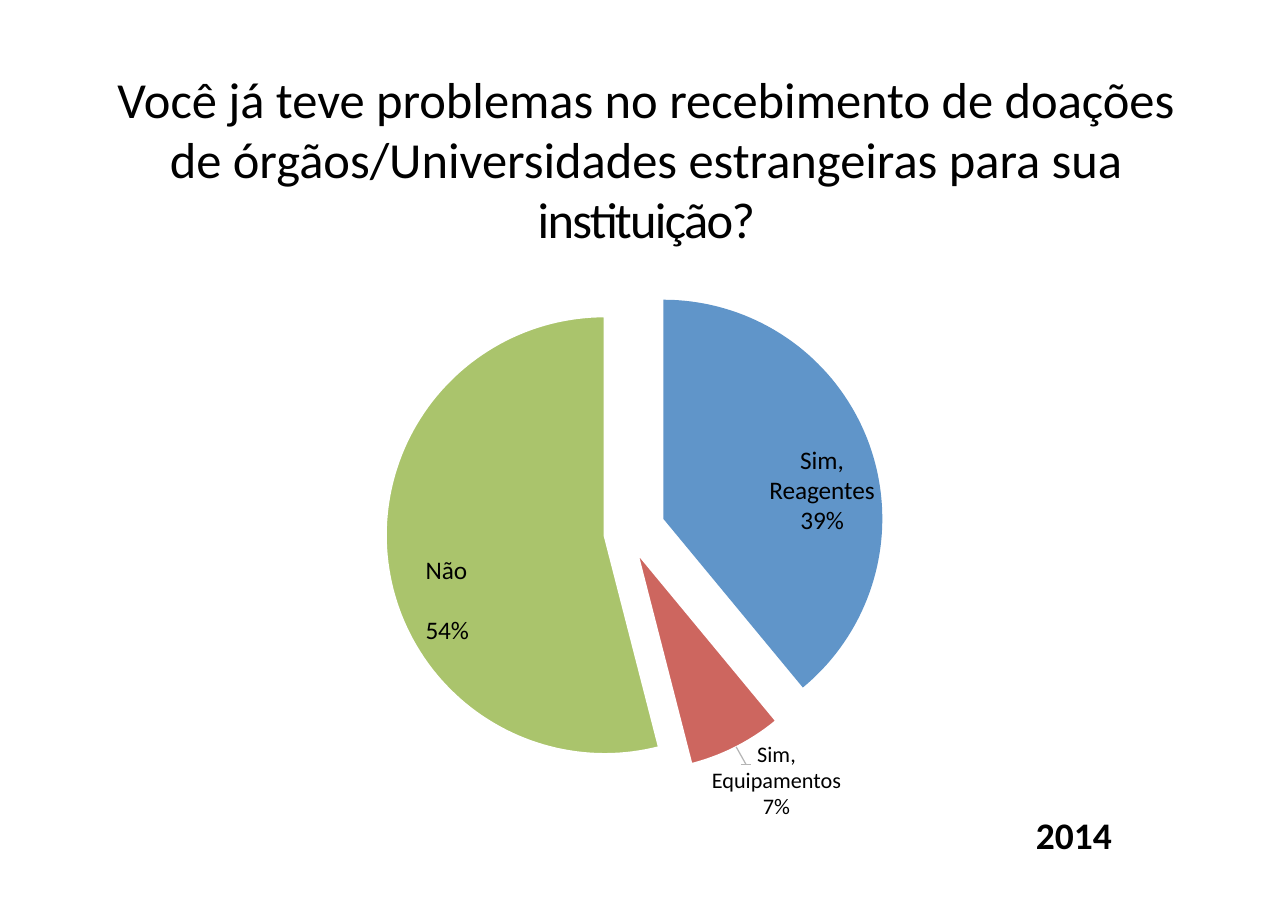
"""Build a slide with an exploded pie of donation problems in 2014."""
import math

import pptx
import pptx.dml.color
import pptx.enum.text
import pptx.oxml
import pptx.util
from pptx.util import Cm, Pt

CENTER = pptx.enum.text.PP_ALIGN.CENTER
LEFT = pptx.enum.text.PP_ALIGN.LEFT


def color(hex_string):
    return pptx.dml.color.RGBColor.from_string(hex_string)


def add_text(text, left, top, width, height, size, align=CENTER, bold=False,
             line_spacing=1.0, space_before=0, gap=0, tight_ending=""):
    text_box = slide.shapes.add_textbox(Cm(left), Cm(top), Cm(width), Cm(height))
    frame = text_box.text_frame
    frame.word_wrap = True
    frame.margin_left = frame.margin_top = frame.margin_right = frame.margin_bottom = 0
    for index, line in enumerate(text.split("\n")):
        paragraph = frame.paragraphs[0] if index == 0 else frame.add_paragraph()
        paragraph.alignment = align
        paragraph.line_spacing = line_spacing
        paragraph.space_before = Pt(gap if index else space_before)
        for piece, spacing in ((line, 0), (tight_ending, -110)):
            if piece:
                run = paragraph.add_run()
                run.text = piece
                run.font.name = "Calibri"
                run.font.size = Pt(size)
                run.font.bold = bold
                run.font.color.rgb = color("000000")
                run._r.get_or_add_rPr().set("spc", str(spacing))


presentation = pptx.Presentation()
presentation.slide_width = Cm(29.69)
presentation.slide_height = Cm(20.98)
slide = presentation.slides.add_slide(presentation.slide_layouts[6])

add_text("Você já teve problemas no recebimento de doações de "
         "órgãos/Universidades estrangeiras para sua ",
         2.5, 1.57, 24.8, 4.14, 33, line_spacing=Pt(39.3), space_before=2.6,
         tight_ending="instituição?")

radius = 5.05
slices = [
    (39, 15.29, 11.96, "6095C9", None),
    (7, 14.68, 12.73, "CD665F", "FFFFFF"),
    (54, 13.94, 12.34, "AAC46C", "FFFFFF"),
]
start = 0
for percent, center_x, center_y, fill, outline in slices:
    steps = percent * 2
    arc = []
    for step in range(steps + 1):
        angle = math.radians(3.6 * (start + percent * step / steps))
        arc.append((Cm(center_x + radius * math.sin(angle)),
                    Cm(center_y - radius * math.cos(angle))))
    builder = slide.shapes.build_freeform(Cm(center_x), Cm(center_y))
    builder.add_line_segments(arc, close=True)
    pie_slice = builder.convert_to_shape()
    pie_slice.shadow.inherit = False
    pie_slice.fill.solid()
    pie_slice.fill.fore_color.rgb = color(fill)
    if outline:
        pie_slice.line.color.rgb = color(outline)
        pie_slice.line.width = Pt(1.55)
    else:
        pie_slice.line.fill.background()
    start += percent

leader_parts = [
    (16.97, 17.22, 17.2, 17.63, "B5B5B5"),
    (17.08, 17.63, 17.32, 17.63, "B5B5B5"),
]
for from_x, from_y, to_x, to_y, line_color in leader_parts:
    leader = slide.shapes.add_connector(
        pptx.enum.shapes.MSO_CONNECTOR.STRAIGHT,
        Cm(from_x), Cm(from_y), Cm(to_x), Cm(to_y))
    leader.line.color.rgb = color(line_color)
    leader.line.width = Pt(0.78)
    leader._element.spPr.append(pptx.oxml.parse_xml(
        '<a:effectLst xmlns:a="http://schemas.openxmlformats.org/drawingml/2006/main"/>'))

add_text("Sim,\nReagentes\n39%", 17.45, 10.24, 3, 2.1, 16.5,
         line_spacing=Pt(19.7), space_before=1.8)
add_text("2014", 23.88, 18.72, 2.2, 1.14, 24.5, align=LEFT, bold=True)
add_text("Sim,\nEquipamentos\n7%", 16.1, 17.09, 3.6, 1.85, 14.5,
         line_spacing=0.98, space_before=1.3)
add_text("Não\n54%", 9.81, 12.78, 1.4, 2.1, 16.5, align=LEFT,
         line_spacing=Pt(19.7), space_before=1.8, gap=19.7)

presentation.save("out.pptx")
